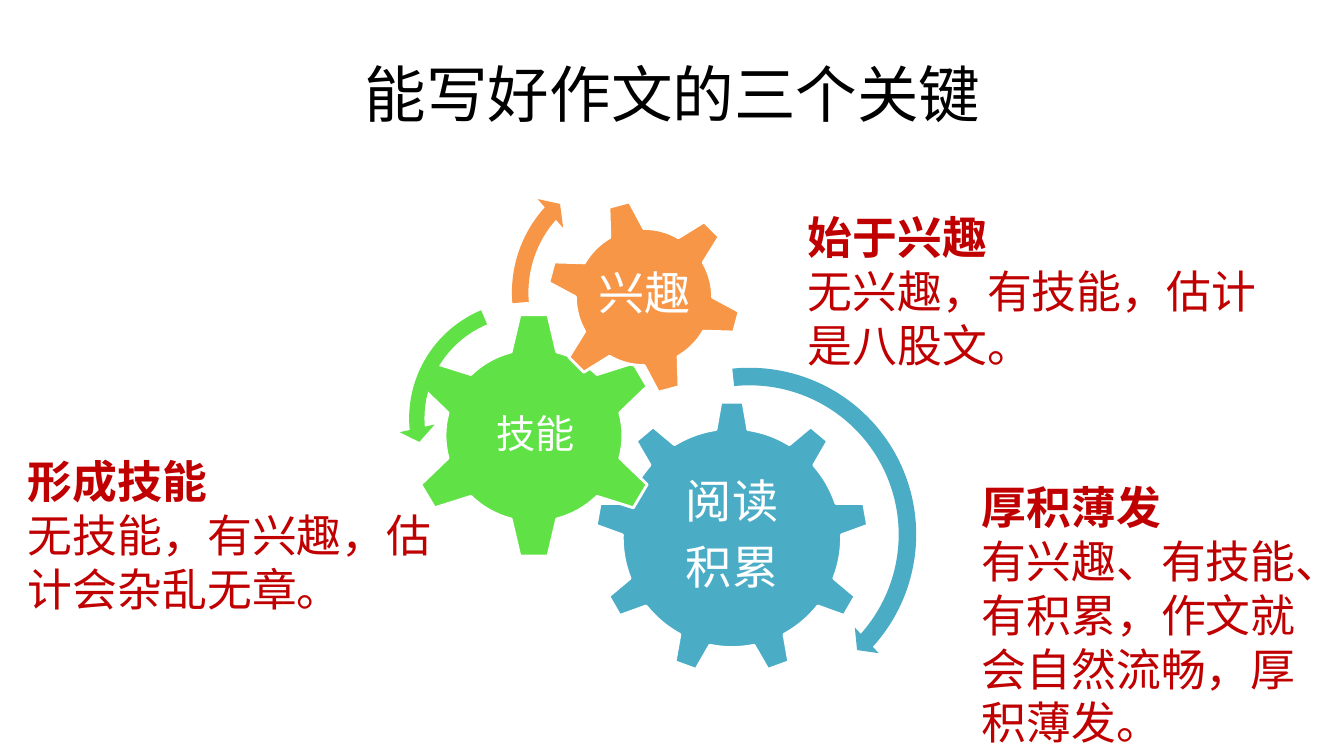
from pptx import Presentation
from pptx.dml.color import RGBColor
from pptx.enum.lang import MSO_LANGUAGE_ID as Language
from pptx.enum.shapes import MSO_SHAPE as Preset
from pptx.enum.text import MSO_ANCHOR as Anchor, PP_ALIGN as Align
from pptx.util import Emu, Pt

SCALE = 12192000 / 1344  # EMU per px

THEME = {
    "title_font": "Noto Sans CJK SC", "body_font": "Calibri",
    "title_size": 44, "note_size": 32, "gear_size": 33, "small_gear_size": 28,
    "black": "000000", "white": "FFFFFF", "red": "C00000",
    "blue": "4BACC6", "green": "60E146", "orange": "F79646",
}


def px(*lengths):
    return [Emu(round(length * SCALE)) for length in lengths]


def add_text(box, lines, font, size, color, align=Align.LEFT, anchor=Anchor.TOP,
             bold_first=False, inset=None, spacing=None):
    """Add a text box with one paragraph per line."""
    frame = slide.shapes.add_textbox(*px(*box)).text_frame
    frame.word_wrap = True
    frame.vertical_anchor = anchor
    if inset is not None:
        (margin,) = px(inset)
        frame.margin_left = frame.margin_right = margin
        frame.margin_top = frame.margin_bottom = margin
    for index, line in enumerate(lines):
        paragraph = frame.add_paragraph() if index else frame.paragraphs[0]
        paragraph.alignment = align
        if spacing:
            paragraph.line_spacing, paragraph.space_after = spacing
        run = paragraph.add_run()
        run.text = line
        run.font.name = THEME[font]
        run.font.size = Pt(THEME[size])
        run.font.bold = bold_first and index == 0
        run.font.color.rgb = RGBColor.from_string(THEME[color])
        run.font.language_id = Language.SIMPLIFIED_CHINESE


presentation = Presentation()
presentation.slide_width, presentation.slide_height = px(1344, 756)
slide = presentation.slides.add_slide(presentation.slide_layouts[6])

# Title
add_text((68, 30, 1210, 126), ["能写好作文的三个关键"], "title_font", "title_size",
         "black", Align.CENTER, Anchor.MIDDLE)

# Gears with their labels
gears = [
    (Preset.GEAR_9, (595, 401, 274, 274), 0, "blue",
     (650, 466, 164, 141), ["阅读", "积累"], "gear_size"),
    (Preset.GEAR_6, (408, 312, 252, 247), 0, "green",
     (472, 375, 127, 122), ["技能"], "small_gear_size"),
    (Preset.GEAR_6, (546, 199, 196, 196), 345, "orange",
     (590, 241, 110, 110), ["兴趣"], "gear_size"),
]
for preset, box, rotation, color, label_box, label, size in gears:
    gear = slide.shapes.add_shape(preset, *px(*box))
    gear.shadow.inherit = False
    gear.rotation = rotation
    gear.fill.solid()
    gear.fill.fore_color.rgb = RGBColor.from_string(THEME[color])
    gear.line.color.rgb = RGBColor.from_string(THEME["white"])
    gear.line.width = Pt(2)
    add_text(label_box, label, "body_font", size, "white", Align.CENTER,
             Anchor.MIDDLE, inset=5, spacing=(0.9, Pt(11.5)))

# Turning arrows: angles are in 60000ths of a degree, divided by 100000
arrows = [
    (Preset.CIRCULAR_ARROW, (574, 359, 351, 351), "blue",
     (0.05, 2.99, 25.24, 158.45, 0.05)),
    (Preset.LEFT_CIRCULAR_ARROW, (399, 291, 255, 255), "green",
     (0.06, 4.3, 104.89, 148.38, 0.07)),
    (Preset.CIRCULAR_ARROW, (501, 155, 275, 275), "orange",
     (0.06, 3.94, 133.14, 105.08, 0.07)),
]
for preset, box, color, adjustments in arrows:
    arrow = slide.shapes.add_shape(preset, *px(*box))
    arrow.shadow.inherit = False
    arrow.fill.solid()
    arrow.fill.fore_color.rgb = RGBColor.from_string(THEME[color])
    arrow.line.fill.background()
    for index, value in enumerate(adjustments):
        arrow.adjustments[index] = value

# Notes beside the gears
notes = [
    ((798, 205, 504, 173), "始于兴趣", "无兴趣，有技能，估计是八股文。"),
    ((18, 449, 425, 173), "形成技能", "无技能，有兴趣，估计会杂乱无章。"),
    ((972, 475, 373, 281), "厚积薄发",
     "有兴趣、有技能、有积累，作文就会自然流畅，厚积薄发。"),
]
for box, heading, detail in notes:
    add_text(box, [heading, detail], "body_font", "note_size", "red", bold_first=True)

presentation.save("out.pptx")
